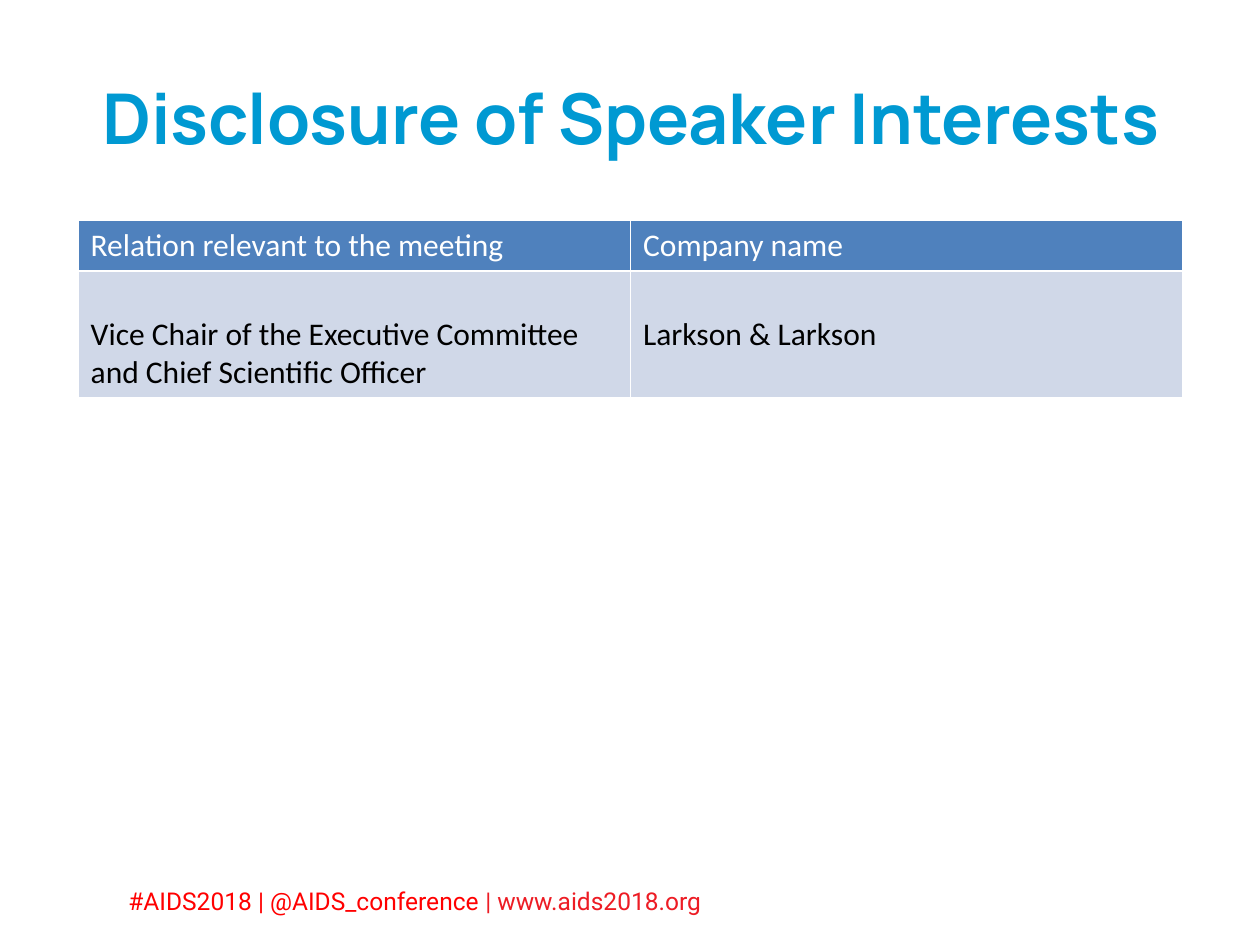
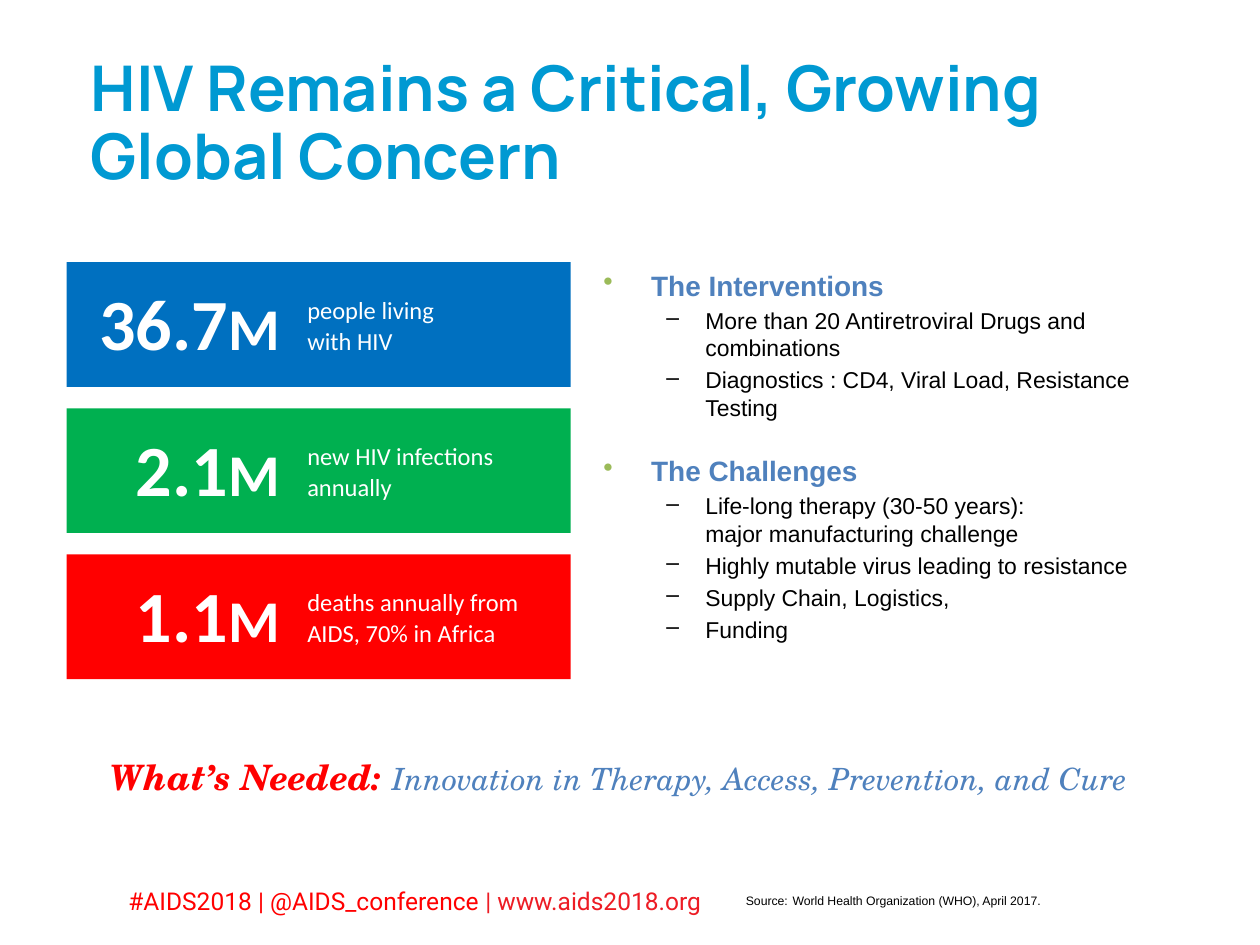
from dataclasses import dataclass

from lxml.etree import SubElement
from pptx import Presentation
from pptx.dml.color import RGBColor
from pptx.enum.shapes import MSO_SHAPE as Preset
from pptx.enum.text import MSO_ANCHOR as Anchor, MSO_AUTO_SIZE as AutoSize, PP_ALIGN as Align
from pptx.oxml.ns import qn
from pptx.util import Inches, Pt

TITLE_ONLY = 5
COLUMNS, ROWS = 100, 75  # grid of the slide


@dataclass(frozen=True)
class Theme:
    # Colours
    title: str = "0099D2"
    accent: str = "4F81BD"
    band: str = "D0D8E8"
    bullet: str = "9BBB59"
    red: str = "FF0000"
    link: str = "ED1C24"
    blue: str = "0070C0"
    green: str = "00B050"
    white: str = "FFFFFF"
    black: str = "000000"
    # Fonts
    title_font: str = "Manrope"
    footer_font: str = "Roboto"
    body_font: str = "Calibri"
    list_font: str = "Arial"
    quote_font: str = "TeX Gyre Schola"
    # Type sizes
    title_size: float = 40
    long_title_size: float = 36
    table_size: float = 18
    figure_size: float = 41.2
    unit_size: float = 33.8
    caption_size: float = 14
    footer_size: float = 14
    heading_size: float = 16
    item_size: float = 13.1
    need_size: float = 20
    answer_size: float = 17.5
    source_size: float = 7


THEME = Theme()


class Deck:
    """Holds the theme and the slide being built."""

    def __init__(self, theme):
        self.theme = theme
        self.presentation = Presentation()
        self.presentation.slide_width = Inches(10)
        self.presentation.slide_height = Inches(7.5)
        self.slide = None

    def place(self, left, top, width, height):
        column = self.presentation.slide_width / COLUMNS
        row = self.presentation.slide_height / ROWS
        return [round(length) for length in (left * column, top * row, width * column, height * row)]

    @staticmethod
    def style(font, name=None, size=None, color=None, bold=None, italic=None):
        if name:
            font.name = name
        if size:
            font.size = Pt(size)
        if color:
            font.color.rgb = RGBColor.from_string(color)
        if bold is not None:
            font.bold = bold
        if italic is not None:
            font.italic = italic

    def add_slide(self, title, size, align):
        layout = self.presentation.slide_layouts[TITLE_ONLY]
        self.slide = self.presentation.slides.add_slide(layout)
        self.footer()
        shape = self.slide.shapes.title
        shape.left, shape.top, shape.width, shape.height = self.place(6.2, 3, 87.7, 12.5)
        frame = shape.text_frame
        frame.text = title
        frame.vertical_anchor = Anchor.MIDDLE
        frame.auto_size = AutoSize.TEXT_TO_FIT_SHAPE
        paragraph = frame.paragraphs[0]
        paragraph.alignment = align
        self.style(paragraph.font, self.theme.title_font, size, self.theme.title, True)

    def footer(self):
        theme = self.theme
        paragraph = self.text((9.2, 69.8, 73.5, 3.4))
        self.runs(paragraph, ("#AIDS2018 | @AIDS_conference ", {"color": theme.red}),
                  ("|\u00a0www.aids2018.org".replace("\u00a0", chr(160)), {"color": theme.link}))
        self.style(paragraph.font, theme.footer_font, theme.footer_size)

    def text(self, box, text="", align=None, anchor=Anchor.TOP, inset=None, **font):
        """Add a text box and return its first paragraph."""
        frame = self.slide.shapes.add_textbox(*self.place(*box)).text_frame
        frame.word_wrap = True
        frame.vertical_anchor = anchor
        if inset is not None:
            frame.margin_left = frame.margin_right = Inches(inset)
            frame.margin_top = frame.margin_bottom = Inches(inset)
        paragraph = frame.paragraphs[0]
        paragraph.text = text
        paragraph.alignment = align
        if font:
            self.style(paragraph.font, **font)
        return paragraph

    def runs(self, paragraph, *parts):
        for text, font in parts:
            run = paragraph.add_run()
            run.text = text
            self.style(run.font, **font)

    def bar(self, box, color):
        shape = self.slide.shapes.add_shape(Preset.RECTANGLE, *self.place(*box))
        shape.shadow.inherit = False
        shape.fill.solid()
        shape.fill.fore_color.rgb = RGBColor.from_string(color)
        shape.line.fill.background()

    def table(self, box, rows, row_heights):
        theme = self.theme
        frame = self.slide.shapes.add_table(len(rows), len(rows[0]), *self.place(*box))
        table = frame.table
        table.horz_banding = False
        for row_index, (texts, height) in enumerate(zip(rows, row_heights)):
            table.rows[row_index].height = Inches(height)
            header = row_index == 0
            for column_index, text in enumerate(texts):
                cell = table.cell(row_index, column_index)
                cell.text = text
                if not header:
                    cell.margin_top = Inches(0.35)
                self.cell_borders(cell)
                cell.fill.solid()
                cell.fill.fore_color.rgb = RGBColor.from_string(theme.accent if header else theme.band)
                self.style(cell.text_frame.paragraphs[0].font, theme.body_font, theme.table_size,
                           theme.white if header else theme.black, False)

    def cell_borders(self, cell):
        properties = cell._tc.get_or_add_tcPr()
        for side in ("a:lnL", "a:lnR", "a:lnT", "a:lnB"):
            line = SubElement(properties, qn(side), w=str(Pt(1)))
            fill = SubElement(line, qn("a:solidFill"))
            SubElement(fill, qn("a:srgbClr"), val=self.theme.white)

    def bullet(self, paragraph, mark, left, hanging, color=None):
        properties = paragraph._p.get_or_add_pPr()
        properties.set("marL", str(Inches(left)))
        properties.set("indent", str(-Inches(hanging)))
        if color:
            bullet_color = SubElement(properties, qn("a:buClr"))
            SubElement(bullet_color, qn("a:srgbClr"), val=color)
        SubElement(properties, qn("a:buChar"), char=mark)

    def outline(self, box, sections):
        """Add headings with dashed items below them."""
        theme = self.theme
        first = self.text(box)
        frame = first._parent
        for index, (heading, items) in enumerate(sections):
            paragraph = frame.add_paragraph() if index else first
            paragraph.text = heading
            self.bullet(paragraph, "•", 0.38, 0.38, theme.bullet)
            if index:
                paragraph.space_before = Pt(18.8)
            self.style(paragraph.font, theme.list_font, theme.heading_size, theme.accent, True)
            for item in items:
                paragraph = frame.add_paragraph()
                paragraph.text = item
                paragraph.level = 1
                self.bullet(paragraph, "–", 0.81, 0.31)
                paragraph.space_before = Pt(0.2 * theme.item_size)
                self.style(paragraph.font, theme.list_font, theme.item_size, theme.black, False)

    def statistic(self, top, figure, caption, color):
        theme = self.theme
        self.bar((5.3, top, 40, 9.9), color)
        paragraph = self.text((23.4, top + 2, 21.9, 6.1), caption, name=theme.body_font,
                              size=theme.caption_size, color=theme.white)
        paragraph.line_spacing = Pt(17.6)
        paragraph = self.text((6, top + 0.8, 17.2, 8), align=Align.RIGHT)
        self.runs(paragraph, (figure, {"size": theme.figure_size}), ("M", {"size": theme.unit_size}))
        self.style(paragraph.font, name=theme.body_font, color=theme.white, bold=True)

    def source(self, box, label, citation):
        paragraph = self.text(box, f"{label}\t{citation}", anchor=Anchor.BOTTOM, inset=0)
        tabs = SubElement(paragraph._p.get_or_add_pPr(), qn("a:tabLst"))
        SubElement(tabs, qn("a:tab"), pos=str(Inches(0.37)), algn="l")
        paragraph.line_spacing = 0.9
        self.style(paragraph.font, self.theme.list_font, self.theme.source_size, self.theme.black)


def disclosure_slide(deck):
    deck.add_slide("Disclosure of Speaker Interests", THEME.title_size, Align.CENTER)
    deck.table((6.2, 17.5, 87.7, 14.1), [
        ("Relation relevant to the meeting", "Company name"),
        ("Vice Chair of the Executive Committee and Chief Scientific Officer", "Larkson & Larkson"),
    ], row_heights=(0.4, 1.01))


def concern_slide(deck):
    deck.add_slide("HIV Remains a Critical, Growing Global Concern", THEME.long_title_size, Align.LEFT)
    deck.source((59.2, 71, 35, 1.1), "Source:", "World Health Organization (WHO), April 2017.")

    # Key figures
    statistics = [
        ("36.7", "people living\vwith HIV", THEME.blue),
        ("2.1", "new HIV infections\vannually", THEME.green),
        ("1.1", "deaths annually from\vAIDS, 70% in Africa", THEME.red),
    ]
    for index, (figure, caption, color) in enumerate(statistics):
        deck.statistic(20.8 + 11.6 * index, figure, caption, color)

    # Interventions and challenges
    deck.outline((46.9, 20.8, 44.5, 33.1), [
        ("The Interventions", [
            "More than 20 Antiretroviral Drugs and combinations",
            "Diagnostics : CD4, Viral Load, Resistance Testing",
        ]),
        ("The Challenges", [
            "Life-long therapy (30-50 years):\vmajor manufacturing challenge",
            "Highly mutable virus leading to resistance",
            "Supply Chain, Logistics,",
            "Funding",
        ]),
    ])

    # Closing line
    paragraph = deck.text((5.3, 59.5, 87.7, 7.3), align=Align.CENTER)
    deck.runs(paragraph,
              ("What’s Needed: ", {"size": THEME.need_size, "color": THEME.red, "bold": True}),
              ("Innovation in Therapy, Access, Prevention, and Cure",
               {"size": THEME.answer_size, "color": THEME.accent, "bold": False}))
    deck.style(paragraph.font, name=THEME.quote_font, italic=True)


def main():
    deck = Deck(THEME)
    disclosure_slide(deck)
    concern_slide(deck)
    deck.presentation.save("out.pptx")


if __name__ == "__main__":
    main()
